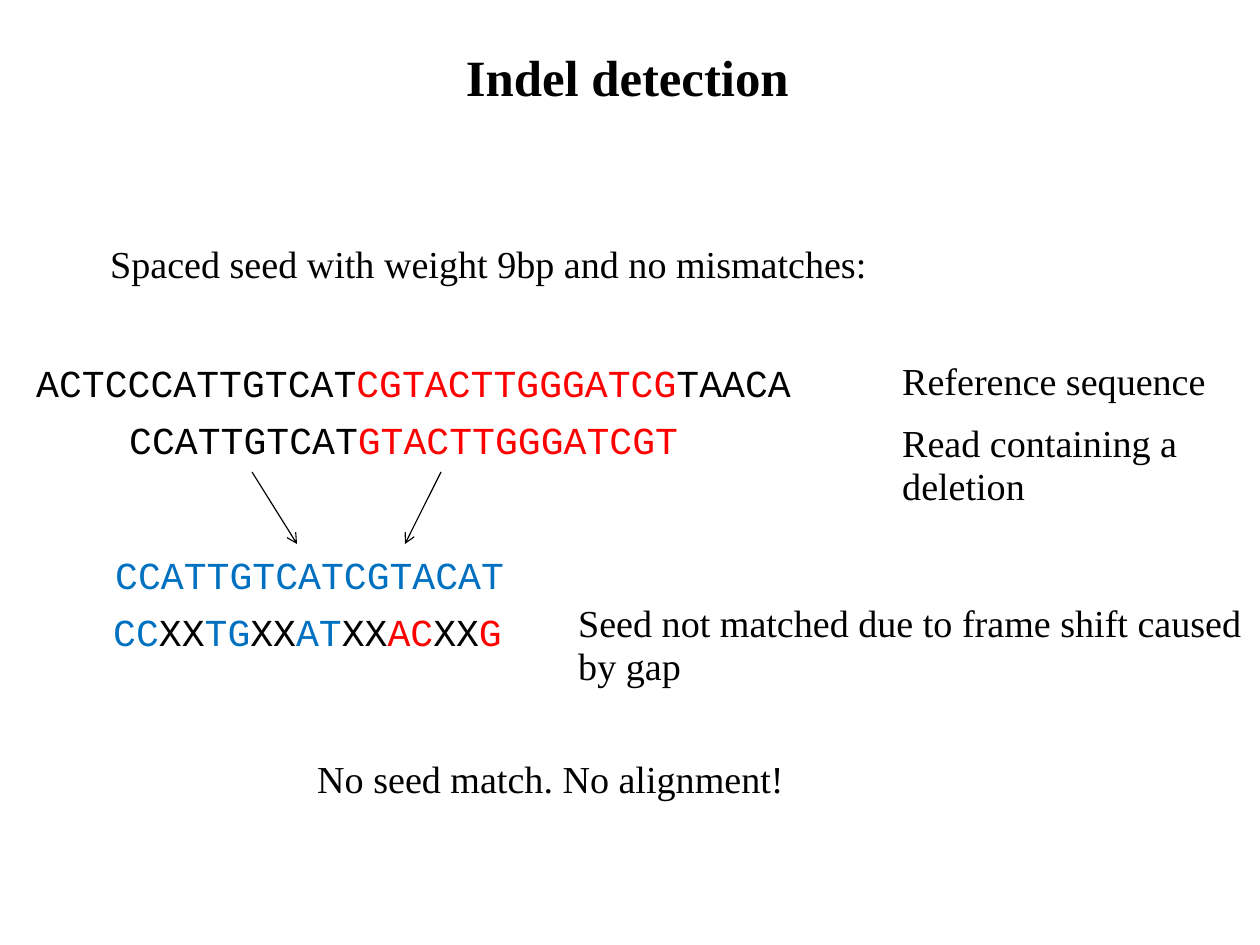
from lxml import etree
from pptx import Presentation
from pptx.dml.color import RGBColor
from pptx.enum.shapes import MSO_CONNECTOR
from pptx.enum.text import MSO_ANCHOR, PP_ALIGN
from pptx.oxml.ns import qn
from pptx.util import Pt

PX = 8000  # EMU
WIDTH, HEIGHT = 1260, 945
LINE = MSO_CONNECTOR.STRAIGHT
CENTER, MIDDLE = PP_ALIGN.CENTER, MSO_ANCHOR.MIDDLE
SERIF, MONO = "Times New Roman", "Courier New"
BLACK, RED, BLUE = "000000", "FF0000", "0070C0"
ROW = 55


def color(code):
    return RGBColor.from_string(code)


def add_text(slide, box, lines, font=SERIF, size=24, bold=False, wrap=True):
    """Each line is a list of (text, colour) runs."""
    frame = slide.shapes.add_textbox(*(n * PX for n in box)).text_frame
    frame.word_wrap = wrap
    for i, runs in enumerate(lines):
        para = frame.add_paragraph() if i else frame.paragraphs[0]
        para.line_spacing = 0.93
        para.font.name, para.font.size = font, Pt(size)
        para.font.bold = bold
        for text, code in runs:
            run = para.add_run()
            run.text = text
            run.font.color.rgb = color(code)
    return frame


def add_note(slide, box, *lines):
    add_text(slide, box, [[(line, BLACK)] for line in lines])


def add_bases(slide, box, *runs, wrap=True):
    add_text(slide, box, [runs], MONO, wrap=wrap)


def add_arrow(slide, start, end):
    arrow = slide.shapes.add_connector(LINE, *(n * PX for n in start + end))
    arrow.line.color.rgb = color(BLACK)
    arrow.line.width = Pt(0.75)
    etree.SubElement(arrow.line._get_or_add_ln(), qn("a:tailEnd"), type="arrow")
    etree.SubElement(arrow._element.spPr, qn("a:effectLst"))


def add_title(slide, box):
    frame = add_text(slide, box, [[("Indel detection", BLACK)]],
                     size=32, bold=True)
    frame.margin_left = frame.margin_right = 0
    frame.margin_top = frame.margin_bottom = 0
    frame.vertical_anchor = MIDDLE
    frame.paragraphs[0].alignment = CENTER


def add_reads(slide, box):
    """Reference and read on the left, their labels on the right."""
    x, y, w, h = box
    side = x + 866
    add_bases(slide, (x, y + 2, 1062, ROW), ("ACTCCCATTGTCAT", BLACK),
              ("CGTACTTGGGATCG", RED), ("TAACA", BLACK))
    add_bases(slide, (x + 93, y + 59, 828, ROW),
              ("CCATTGTCAT", BLACK), ("GTACTTGGGATCGT", RED))
    add_note(slide, (side, y, x + w - side, ROW), "Reference sequence")
    add_note(slide, (side, y + 62, x + w - side, h - 62),
             "Read containing a", "deletion")


def add_seed(slide, box):
    """Arrows down to the seed, its mask and the outcome."""
    x, y, w, h = box
    for start, end in ((150, 195), (339, 303)):
        add_arrow(slide, (x + start, y), (x + end, y + 72))
    add_bases(slide, (x + 2, y + 78, 495, ROW), ("CCATTGTCATCGTACAT", BLUE))
    gap = ("XX", BLACK)
    add_bases(slide, (x, y + 135, 415, ROW), ("CC", BLUE), gap, ("TG", BLUE),
              gap, ("AT", BLUE), gap, ("AC", RED), gap, ("G", RED), wrap=False)
    add_note(slide, (x + 465, y + 126, w - 465, h - 126),
             "Seed not matched due to frame shift caused by gap")


def main():
    deck = Presentation()
    deck.slide_width, deck.slide_height = WIDTH * PX, HEIGHT * PX
    slide = deck.slides.add_slide(deck.slide_layouts[6])
    add_title(slide, (90, 1, 1075, 157))
    add_note(slide, (99, 239, 801, ROW),
             "Spaced seed with weight 9bp and no mismatches:")
    add_reads(slide, (25, 356, WIDTH - 25, 159))
    add_seed(slide, (102, 472, WIDTH - 102, 223))
    add_note(slide, (306, 754, 514, ROW), "No seed match. No alignment!")
    deck.save("out.pptx")


if __name__ == "__main__":
    main()
